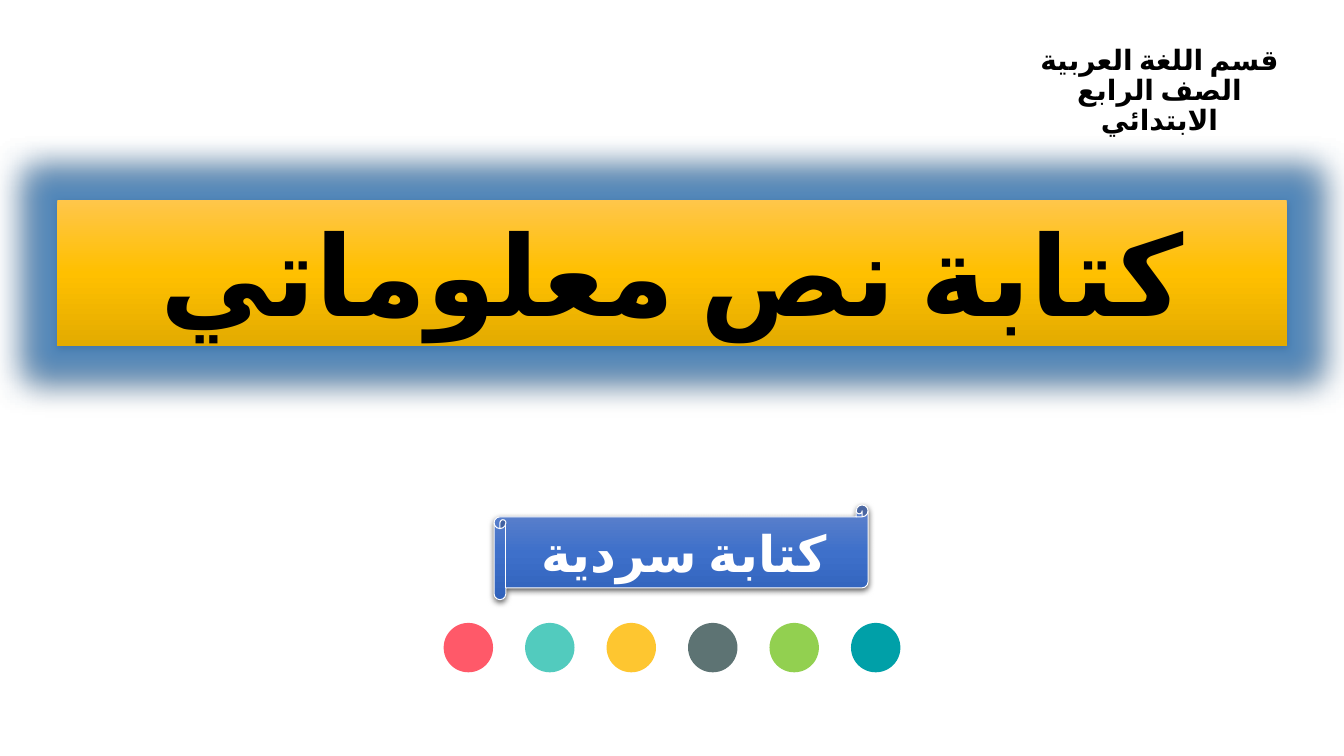
import lxml.etree
import pptx
import pptx.dml.color
import pptx.enum.shapes
import pptx.enum.text
import pptx.oxml
import pptx.oxml.ns
import pptx.util

Inches = pptx.util.Inches
RGBColor = pptx.dml.color.RGBColor
SHAPE = pptx.enum.shapes.MSO_SHAPE
ANCHOR = pptx.enum.text.MSO_ANCHOR

BLACK = RGBColor(0x00, 0x00, 0x00)
WHITE = RGBColor(0xFF, 0xFF, 0xFF)
GLOW_BLUE = RGBColor(0x38, 0x84, 0xCC)
GOLD_STOPS = [RGBColor(0xFF, 0xC6, 0x4B), RGBColor(0xFF, 0xC0, 0x00), RGBColor(0xE3, 0xAB, 0x00)]
BLUE_STOPS = [RGBColor(0x61, 0x83, 0xCB), RGBColor(0x3E, 0x70, 0xCA), RGBColor(0x30, 0x62, 0xBB)]
DOT_COLORS = [
    RGBColor(0xFF, 0x59, 0x69), RGBColor(0x52, 0xCB, 0xBE), RGBColor(0xFE, 0xC6, 0x30),
    RGBColor(0x5D, 0x73, 0x73), RGBColor(0x92, 0xD0, 0x50), RGBColor(0x00, 0xA0, 0xA8),
]


def write_text(shape, lines, size, color, anchor, spacing=1.0):
    frame = shape.text_frame
    frame.word_wrap = True
    frame.auto_size = pptx.enum.text.MSO_AUTO_SIZE.NONE
    frame.vertical_anchor = anchor
    frame.text = "\n".join(lines)
    font_format = {"name": "Calibri", "size": pptx.util.Pt(size), "bold": True}
    for para in frame.paragraphs:
        para.alignment = pptx.enum.text.PP_ALIGN.CENTER
        para.line_spacing = spacing
        para._p.get_or_add_pPr().set("rtl", "1")
        for span in para.runs:
            for name, value in font_format.items():
                setattr(span.font, name, value)
            span.font.color.rgb = color
            # Arabic letters take the complex-script font
            properties = span._r.get_or_add_rPr()
            properties.set("lang", "ar-SA")
            script_font = lxml.etree.SubElement(properties, pptx.oxml.ns.qn("a:cs"))
            script_font.set("typeface", "Calibri")


def style_panel(shape, stops, glow=""):
    """Three-stop vertical gradient, with a soft shadow and an optional glow."""
    shape.fill.gradient()
    shape.fill.gradient_angle = 270
    stop_list = shape._element.spPr.find(".//" + pptx.oxml.ns.qn("a:gsLst"))
    namespace = pptx.oxml.ns.nsdecls("a")
    for stop in list(stop_list):
        stop_list.remove(stop)
    for position, color in zip((0, 50000, 100000), stops):
        stop_list.append(pptx.oxml.parse_xml(
            f'<a:gs {namespace} pos="{position}"><a:srgbClr val="{color}"/></a:gs>'))
    shape.shadow.inherit = False
    effects = shape._element.spPr.find(pptx.oxml.ns.qn("a:effectLst"))
    shadow = (f'<a:outerShdw {namespace} blurRad="57150" dist="19050" dir="5400000" algn="ctr" '
              f'rotWithShape="0"><a:srgbClr val="{BLACK}"><a:alpha val="63000"/></a:srgbClr></a:outerShdw>')
    if glow:
        effects.append(pptx.oxml.parse_xml(
            f'<a:glow {namespace} rad="{Inches(0.65)}"><a:srgbClr val="{glow}">'
            f'<a:alpha val="70000"/></a:srgbClr></a:glow>'))
    effects.append(pptx.oxml.parse_xml(shadow))


deck = pptx.Presentation()
deck.slide_width, deck.slide_height = Inches(13.33), Inches(7.5)
slide = deck.slides.add_slide(deck.slide_layouts[5])

# Title banner
banner = slide.shapes.title
banner.left, banner.top = Inches(0.57), Inches(1.98)
banner.width, banner.height = Inches(12.19), Inches(1.45)
style_panel(banner, GOLD_STOPS, GLOW_BLUE)
write_text(banner, ["كتابة نص معلوماتي"], 80, BLACK, ANCHOR.TOP)

# Row of coloured dots
for index, color in enumerate(DOT_COLORS):
    dot = slide.shapes.add_shape(
        SHAPE.OVAL, Inches(4.4) + index * Inches(4.04) // 5, Inches(6.18), Inches(0.49), Inches(0.49))
    dot.fill.solid()
    dot.fill.fore_color.rgb = color
    dot.line.fill.background()
    dot.shadow.inherit = False

# Department and class
department = slide.shapes.add_textbox(Inches(10.2), Inches(0.41), Inches(2.6), Inches(0.85))
write_text(department, ["قسم اللغة العربية", "الصف الرابع الابتدائي"], 20, BLACK, ANCHOR.TOP, 0.9)

# Scroll with the kind of writing
scroll = slide.shapes.add_shape(
    SHAPE.HORIZONTAL_SCROLL, Inches(4.9), Inches(5.01), Inches(3.71), Inches(0.94))
style_panel(scroll, BLUE_STOPS)
scroll.line.color.rgb = WHITE
scroll.line.width = pptx.util.Pt(0.75)
write_text(scroll, ["كتابة سردية"], 36, WHITE, ANCHOR.MIDDLE)

deck.save("out.pptx")
